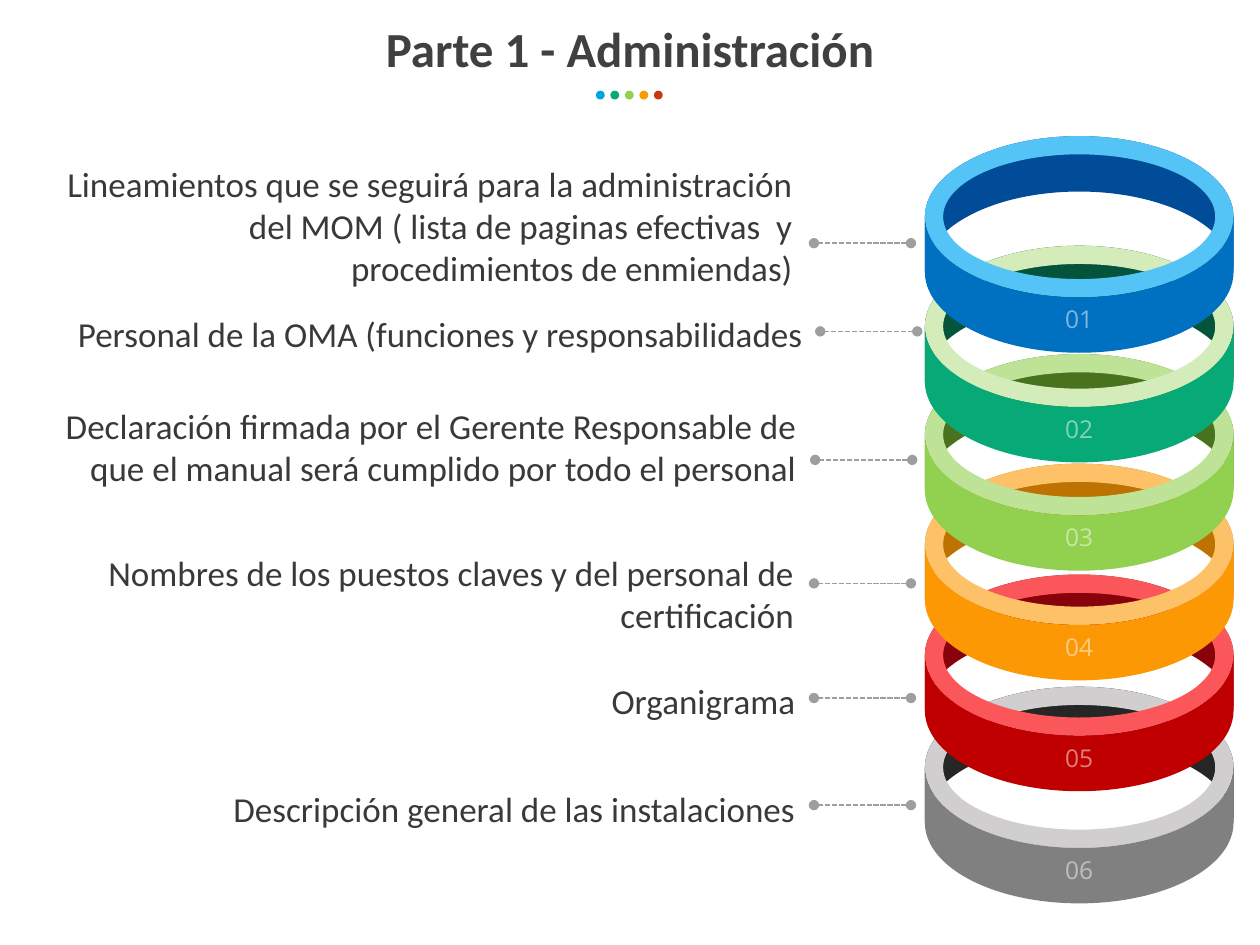
from lxml import etree
from pptx import Presentation
from pptx.dml.color import RGBColor
from pptx.enum import dml, shapes, text
from pptx.oxml.ns import qn
from pptx.util import Inches, Pt

TITLE = "Parte 1 - Administración"
COLORS = {"title": "404040", "body": "3B3838", "line": "9E9E9E", "number": "FFFFFF"}
DOTS = ["00A4DE", "07A977", "92D050", "FC9804", "C53811"]

# label, label box (left, top, width, height), connector (left, y),
# ring top, ring colours (back wall, rim, front wall)
ITEMS = [
    ("Lineamientos que se seguirá para la administración del MOM "
     "( lista de paginas efectivas  y procedimientos de enmiendas)",
     (0.29, 1.24, 6.1, 0.94), (6.46, 1.93), 1.08, ("004C99", "54C3F6", "0070C0")),
    ("Personal de la OMA (funciones y responsabilidades",
     (0.49, 2.43, 5.98, 0.48), (6.51, 2.63), 1.95, ("04543C", "D3ECB9", "07A977")),
    ("Declaración firmada por el Gerente Responsable de que el manual "
     "será cumplido por todo el personal",
     (0.42, 3.16, 6, 0.93), (6.47, 3.65), 2.81, ("49721E", "BEE396", "92D050")),
    ("Nombres de los puestos claves y del personal de certificación",
     (0.39, 4.33, 6.01, 0.68), (6.46, 4.63), 3.68, ("BE7202", "FDC168", "FC9804")),
    ("Organigrama",
     (0.4, 5.34, 6.01, 0.53), (6.46, 5.54), 4.56, ("88020C", "FB575B", "C00000")),
    ("Descripción general de las instalaciones",
     (0.4, 6.2, 6.01, 0.53), (6.46, 6.39), 5.45, ("262626", "D0CECE", "808080")),
]

RING_LEFT, RING_W, RING_H = 7.34, 2.45, 1.28
RIM, WALL = 0.145, 0.44
HALF_TURN = 180 * 60000
CONNECTOR_W = 0.77


def paint(sp, color):
    sp.shadow.inherit = False
    sp.fill.solid()
    sp.fill.fore_color.rgb = RGBColor.from_string(color)
    sp.line.fill.background()


def style(p, align, font, size, color, bold=False):
    p.alignment = align
    f = p.runs[0].font
    f.name, f.size, f.bold = font, Pt(size), bold
    f.color.rgb = RGBColor.from_string(color)


def add_label(s, box, words, align, size, color, bold=False):
    tf = s.shapes.add_textbox(*map(Inches, box)).text_frame
    tf.word_wrap = True
    tf.text = words
    style(tf.paragraphs[0], align, "Calibri", size, color, bold)


def arc(start, sweep):
    return etree.Element(qn("a:arcTo"), wR=str(Inches(RING_W / 2)),
                         hR=str(Inches(RING_H / 2)), stAng=str(start), swAng=str(sweep))


def add_wall(s, top, color, side):
    """Half of the ring's band: side is -1 for the back, 1 for the front."""
    a, b = RING_W / 2, RING_H / 2
    left, mid, right = RING_LEFT, RING_LEFT + a, RING_LEFT + RING_W
    inner, outer = (top + b, top + b + WALL)[::side]
    outline = [(right, inner), (right, outer), (mid, outer + side * b),
               (left, outer), (left, inner), (mid, inner + side * b)]
    points = [(Inches(x), Inches(y)) for x, y in outline]
    builder = s.shapes.build_freeform(*points[0])
    builder.add_line_segments(points[1:], close=True)
    sp = builder.convert_to_shape()

    # The two bends through the middle become half ellipses.
    segments = list(sp._element.iter(qn("a:lnTo")))
    route = segments[0].getparent()
    route.replace(segments[1], arc(0, side * HALF_TURN))
    route.remove(segments[2])
    route.replace(segments[4], arc(HALF_TURN, -side * HALF_TURN))
    for extra in segments[5:]:
        route.remove(extra)
    paint(sp, color)
    return sp


def add_number(sp, number):
    tf = sp.text_frame
    tf.margin_left = tf.margin_right = tf.margin_bottom = 0
    tf.margin_top = Inches(0.54)
    tf.vertical_anchor = text.MSO_ANCHOR.MIDDLE
    tf.text = f"{number:02d}"
    p = tf.paragraphs[0]
    style(p, text.PP_ALIGN.CENTER, "Open Sans", 14, COLORS["number"])
    rgb = p.runs[0]._r.find(".//" + qn("a:srgbClr"))
    etree.SubElement(rgb, qn("a:alpha"), val="50000")


def add_ring(s, top, colors, number):
    back, rim, front = colors
    add_wall(s, top, back, -1)
    sp = s.shapes.add_shape(shapes.MSO_SHAPE.DONUT, Inches(RING_LEFT), Inches(top),
                            Inches(RING_W), Inches(RING_H))
    sp.adjustments[0] = RIM / RING_H
    paint(sp, rim)
    add_number(add_wall(s, top, front, 1), number)


def add_dotted_line(s, left, y):
    cx = s.shapes.add_connector(shapes.MSO_CONNECTOR.STRAIGHT, Inches(left + CONNECTOR_W),
                                Inches(y), Inches(left), Inches(y))
    cx.line.color.rgb = RGBColor.from_string(COLORS["line"])
    cx.line.width = Pt(1)
    cx.line.dash_style = dml.MSO_LINE.SQUARE_DOT
    ln = cx.line._get_or_add_ln()
    for end in ("a:headEnd", "a:tailEnd"):
        etree.SubElement(ln, qn(end), type="oval")
    etree.SubElement(cx._element.spPr, qn("a:effectLst"))


def main():
    prs = Presentation()
    prs.slide_width, prs.slide_height = Inches(10), Inches(7.5)
    s = prs.slides.add_slide(prs.slide_layouts[6])

    add_label(s, (0, 0.1, 10, 0.57), TITLE, text.PP_ALIGN.CENTER, 28,
              COLORS["title"], bold=True)
    for i, color in enumerate(DOTS):
        dot = s.shapes.add_shape(shapes.MSO_SHAPE.OVAL, Inches(4.73 + 0.115 * i),
                                 Inches(0.72), Inches(0.07), Inches(0.07))
        paint(dot, color)

    # The lowest ring lies at the back, so the stack is drawn upwards.
    for number, item in reversed(list(enumerate(ITEMS, 1))):
        label, box, line, ring_top, colors = item
        add_ring(s, ring_top, colors, number)
        add_label(s, box, label, text.PP_ALIGN.RIGHT, 20, COLORS["body"])
        add_dotted_line(s, *line)

    prs.save("out.pptx")


if __name__ == "__main__":
    main()
